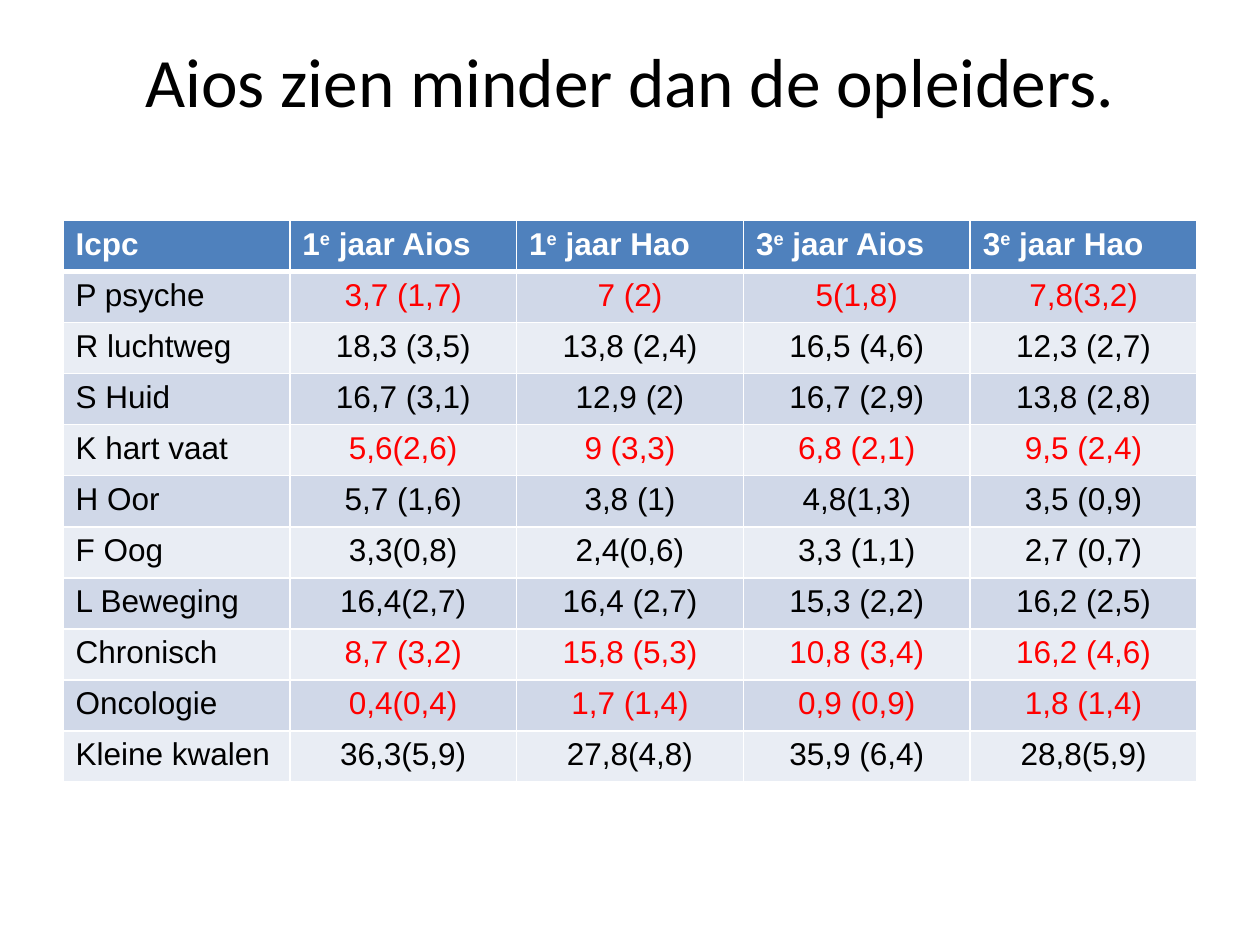
from pptx import Presentation
from pptx.dml.color import RGBColor
from pptx.enum.text import MSO_ANCHOR, MSO_AUTO_SIZE, PP_ALIGN
from pptx.oxml import parse_xml
from pptx.oxml.ns import nsdecls
from pptx.util import Inches, Pt

LEFT, CENTER = PP_ALIGN.LEFT, PP_ALIGN.CENTER
TOP = MSO_ANCHOR.TOP
FIXED = MSO_AUTO_SIZE.NONE

TITLE = "Aios zien minder dan de opleiders."
# Each head is a list of runs; the second run is raised.
HEADS = [
    ["Icpc"],
    ["1", "e", " jaar Aios"],
    ["1", "e", " jaar Hao"],
    ["3", "e", " jaar Aios"],
    ["3", "e", " jaar Hao"],
]
ROWS = [
    ("P psyche", "3,7 (1,7)", "7 (2)", "5(1,8)", "7,8(3,2)"),
    ("R luchtweg", "18,3 (3,5)", "13,8 (2,4)", "16,5 (4,6)", "12,3 (2,7)"),
    ("S Huid", "16,7 (3,1)", "12,9 (2)", "16,7 (2,9)", "13,8 (2,8)"),
    ("K hart vaat", "5,6(2,6)", "9 (3,3)", "6,8 (2,1)", "9,5 (2,4)"),
    ("H Oor", "5,7 (1,6)", "3,8 (1)", "4,8(1,3)", "3,5 (0,9)"),
    ("F Oog", "3,3(0,8)", "2,4(0,6)", "3,3 (1,1)", "2,7 (0,7)"),
    ("L Beweging", "16,4(2,7)", "16,4 (2,7)", "15,3 (2,2)", "16,2 (2,5)"),
    ("Chronisch", "8,7 (3,2)", "15,8 (5,3)", "10,8 (3,4)", "16,2 (4,6)"),
    ("Oncologie", "0,4(0,4)", "1,7 (1,4)", "0,9 (0,9)", "1,8 (1,4)"),
    ("Kleine kwalen", "36,3(5,9)", "27,8(4,8)", "35,9 (6,4)", "28,8(5,9)"),
]
MARKED = {"P psyche", "K hart vaat", "Chronisch", "Oncologie"}

THEME = {
    "head": "4F81BD", "bands": ("D0D8E8", "E9EDF4"), "line": "FFFFFF",
    "light": "FFFFFF", "dark": "000000", "mark": "FF0000",
    "title_font": "Calibri", "title_size": 39.6,
    "font": "Arial", "size": 18,
}


def style(run, font, size, color, bold=False):
    run.font.name = font
    run.font.size = Pt(size)
    run.font.bold = bold
    run.font.color.rgb = RGBColor.from_string(color)


def edge(cell, top, bottom):
    """Draw the four borders; top and bottom are widths in points."""
    props = cell._tc.get_or_add_tcPr()
    sides = (("L", 1), ("R", 1), ("T", top), ("B", bottom))
    for i, (side, width) in enumerate(sides):
        props.insert(i, parse_xml(
            f'<a:ln{side} {nsdecls("a")} w="{Pt(width)}"><a:solidFill>'
            f'<a:srgbClr val="{THEME["line"]}"/></a:solidFill></a:ln{side}>'))


def put(cell, parts, fill, color, align=LEFT, bold=False):
    cell.fill.solid()
    cell.fill.fore_color.rgb = RGBColor.from_string(fill)
    para = cell.text_frame.paragraphs[0]
    para.alignment = align
    for i, part in enumerate(parts):
        run = para.add_run()
        run.text = part
        style(run, THEME["font"], THEME["size"], color, bold)
        if i == 1:
            run._r.get_or_add_rPr().set("baseline", "30000")


def add_title(slide):
    title = slide.shapes.title
    title.left, title.top = Inches(0.5), Inches(0.3)
    title.width, title.height = Inches(9), Inches(1.25)
    frame = title.text_frame
    frame.text = TITLE
    frame.auto_size = FIXED
    frame.vertical_anchor = TOP
    frame.margin_top = 0
    para = frame.paragraphs[0]
    para.alignment = CENTER
    style(para.runs[0], THEME["title_font"], THEME["title_size"], THEME["dark"])


def add_grid(slide):
    grid = slide.shapes.add_table(
        len(ROWS) + 1, len(HEADS),
        Inches(0.5), Inches(1.75), Inches(9), Inches(4.46)).table
    grid.horz_banding = False
    for c, parts in enumerate(HEADS):
        cell = grid.cell(0, c)
        put(cell, parts, THEME["head"], THEME["light"], bold=True)
        edge(cell, 1, 3)
    for r, row in enumerate(ROWS):
        fill = THEME["bands"][r % 2]
        tone = THEME["mark" if row[0] in MARKED else "dark"]
        for c, text in enumerate(row):
            cell = grid.cell(r + 1, c)
            if c == 0:
                put(cell, [text], fill, THEME["dark"])
            else:
                put(cell, [text], fill, tone, CENTER)
            edge(cell, 3 if r == 0 else 1, 1)


def main():
    deck = Presentation()
    deck.slide_width, deck.slide_height = Inches(10), Inches(7.5)
    slide = deck.slides.add_slide(deck.slide_layouts[5])
    add_title(slide)
    add_grid(slide)
    deck.save("out.pptx")


if __name__ == "__main__":
    main()
